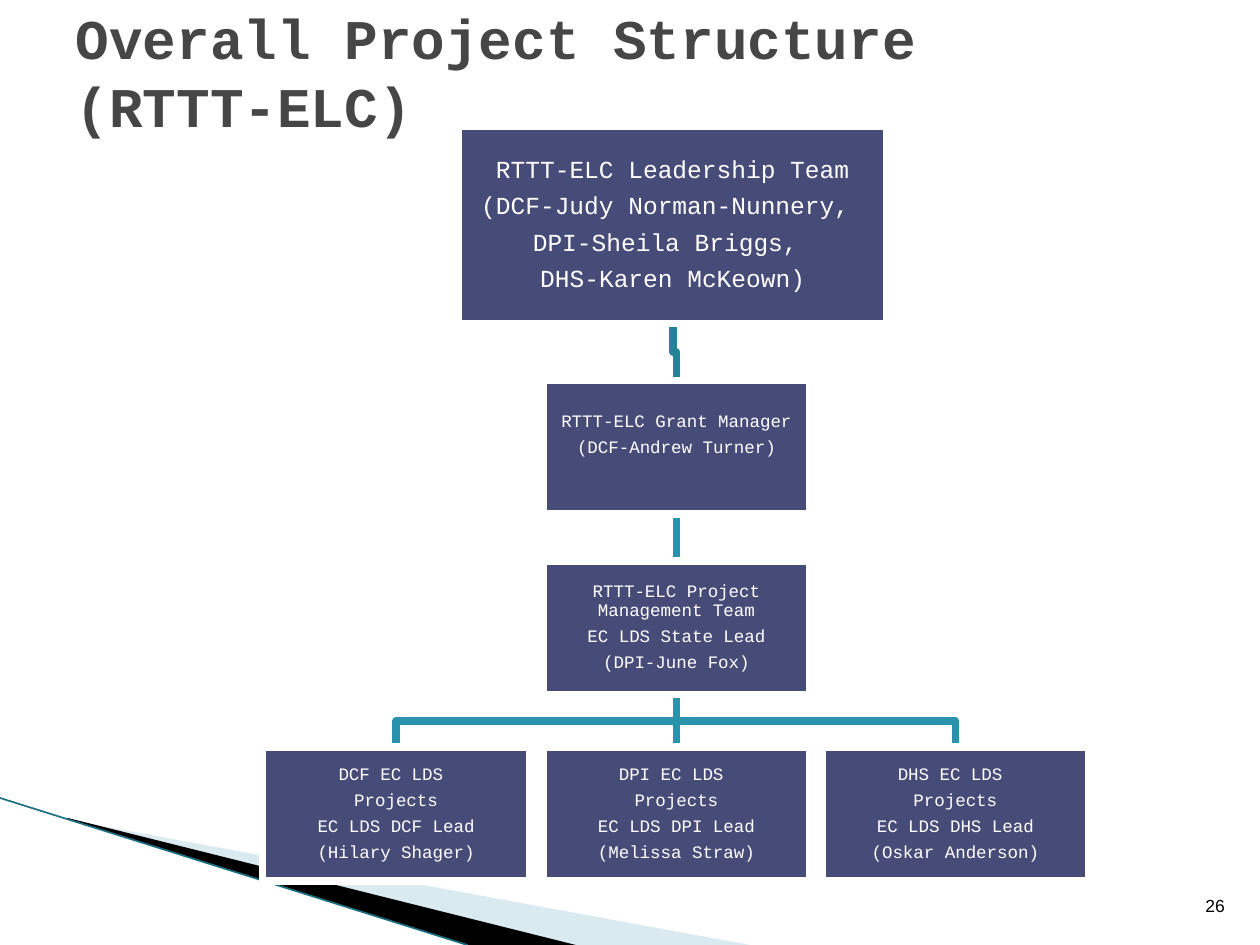
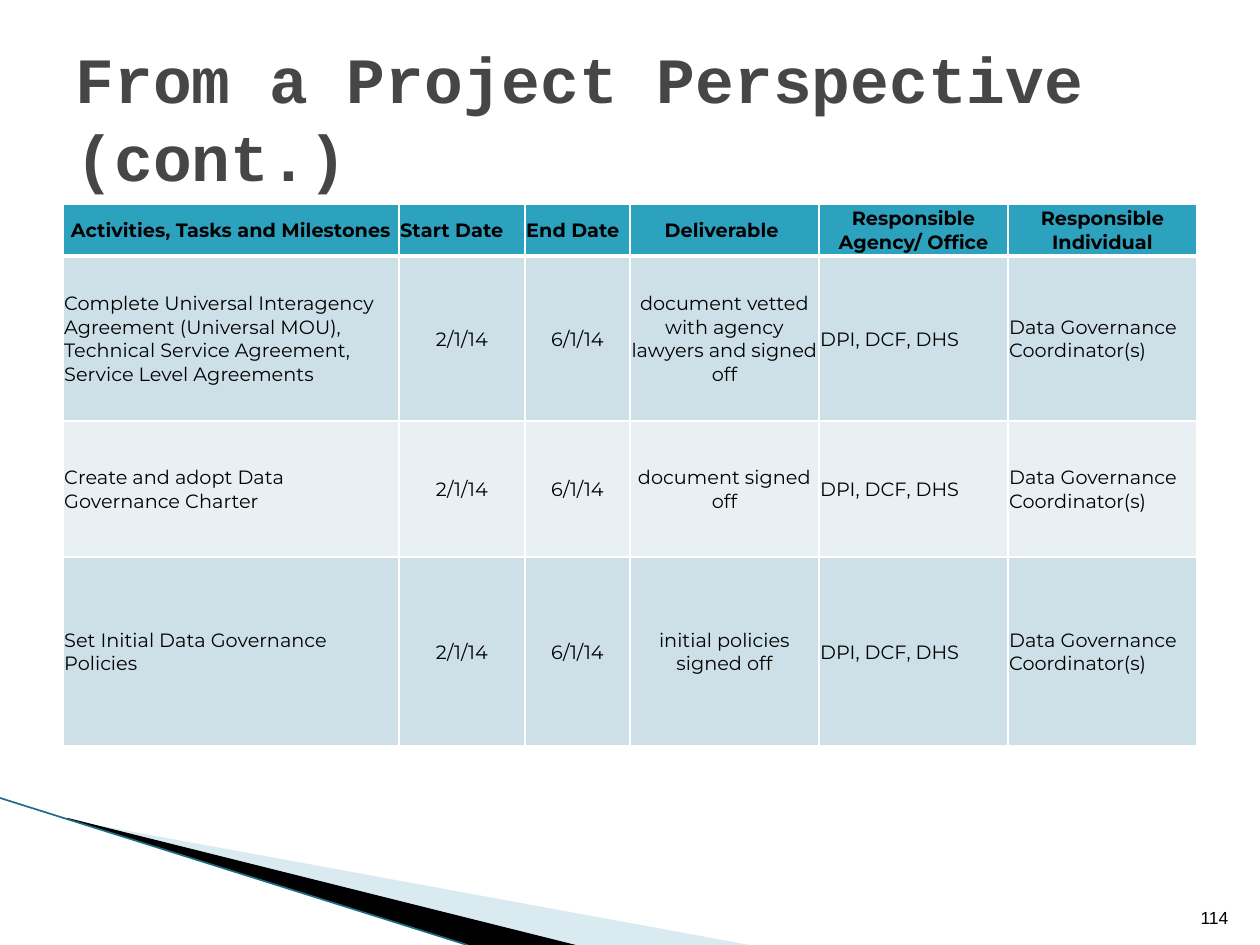
from lxml import etree
from pptx import Presentation
from pptx import util as u
from pptx.dml.color import RGBColor
from pptx.enum import shapes, text
from pptx.oxml import ns

Pt = u.Pt
LEFT, CENTER, RIGHT = text.PP_ALIGN.LEFT, text.PP_ALIGN.CENTER, text.PP_ALIGN.RIGHT
MIDDLE = text.MSO_ANCHOR.MIDDLE
MONO = "Courier New"
WHITE, BLACK, TITLE_GREY = "FFFFFF", "000000", "464646"
NAVY, TEAL, DARK_TEAL = "474B78", "2993AD", "248299"
PALE_BLUE, EDGE_TEAL = "A0CBDC", "1B6F83"
HEADER_FILL, ROW_FILLS = "2DA2BF", ["CDE0E8", "E8F0F4"]


def paint(color_format, hex_color):
    """Give a fill, line or font colour object its colour."""
    color_format.rgb = RGBColor.from_string(hex_color)


def style(p, font, size, color, align, bold=False):
    p.alignment = align
    p.font.name, p.font.size, p.font.bold = font, Pt(size), bold
    paint(p.font.color, color)


prs = Presentation()
prs.slide_width, prs.slide_height = Pt(720), Pt(540)

# Titles and page numbers: words, size, box height and width, number and its box
pages = [
    ("Overall Project Structure (RTTT-ELC)", 32, 624, 38, "26", (522, 498, 185, 29)),
    ("From a Project Perspective (cont.)", 36.9, 648, 90, "114", (654, 505, 55, 29)),
]
for title, size, width, height, number, number_box in pages:
    s = prs.slides.add_slide(prs.slide_layouts[5])
    sp = s.shapes.title
    sp.left, sp.top, sp.width, sp.height = Pt(36), Pt(21.6), Pt(width), Pt(height)
    tf = sp.text_frame
    tf.text = title
    tf.auto_size = text.MSO_AUTO_SIZE.NONE
    tf.vertical_anchor = MIDDLE
    style(tf.paragraphs[0], MONO, size, TITLE_GREY, LEFT, True)

    tf = s.shapes.add_textbox(*map(Pt, number_box)).text_frame
    tf.word_wrap = True
    tf.vertical_anchor = text.MSO_ANCHOR.BOTTOM
    tf.text = number
    style(tf.paragraphs[0], "Arial", 10, BLACK, RIGHT)

chart_slide, table_slide = prs.slides

# Corner wedges, shared through the slide master
s = chart_slide
master_first = prs.slide_master.shapes[0].element
wedges = [
    (PALE_BLUE, [(39.6, 468.7), (428.4, 540), (328.3, 540), (39.6, 468)]),
    (BLACK, [(38.2, 467.3), (329, 540), (267.8, 540), (38.9, 468)]),
]
for color, points in wedges:
    points = [(Pt(x), Pt(y)) for x, y in points]
    outline = s.shapes.build_freeform(*points[0])
    outline.add_line_segments(points[1:])
    sp = outline.convert_to_shape()
    sp.shadow.inherit = False
    sp.line.fill.background()
    sp.fill.solid()
    paint(sp.fill.fore_color, color)
    if color == PALE_BLUE:
        srgb = sp.element.find(".//" + ns.qn("a:srgbClr"))
        etree.SubElement(srgb, ns.qn("a:alpha"), val="40000")
    master_first.addprevious(sp.element)

edge = s.shapes.add_connector(shapes.MSO_CONNECTOR.STRAIGHT, 0, Pt(456), Pt(267), Pt(540))
edge.line.width = Pt(0.95)
paint(edge.line.color, EDGE_TEAL)
etree.SubElement(edge.element.spPr, ns.qn("a:effectLst"))
master_first.addprevious(edge.element)

# Organisation chart
BOX_W, BOX_H = 152.6, 76.3
columns = [150, 310.2, 469.6]
BOTTOM_Y = 427
leads = [("DCF", "Hilary Shager"), ("DPI", "Melissa Straw"), ("DHS", "Oskar Anderson")]
teams = [
    (262, 72, 245, 113, 14, "RTTT-ELC Leadership Team\n(DCF-Judy Norman-Nunnery, \n"
                            "DPI-Sheila Briggs, \nDHS-Karen McKeown)"),
    (columns[1], 217.5, BOX_W, BOX_H, 10, "RTTT-ELC Grant Manager\n(DCF-Andrew Turner)"),
    (columns[1], 320.5, BOX_W, BOX_H, 10,
     "RTTT-ELC Project Management Team\nEC LDS State Lead\n(DPI-June Fox)"),
]
for x, (agency, person) in zip(columns, leads):
    teams.append((x, BOTTOM_Y, BOX_W, BOX_H, 10,
                  f"{agency} EC LDS \nProjects\nEC LDS {agency} Lead\n({person})"))

boxes = []
for x, y, w, h, size, words in teams:
    sp = s.shapes.add_shape(shapes.MSO_SHAPE.RECTANGLE, Pt(x), Pt(y), Pt(w), Pt(h))
    sp.shadow.inherit = False
    sp.fill.solid()
    paint(sp.fill.fore_color, NAVY)
    sp.line.width = Pt(4.33)
    paint(sp.line.color, WHITE)
    tf = sp.text_frame
    tf.word_wrap = True
    tf.vertical_anchor = MIDDLE
    tf.margin_left = tf.margin_right = tf.margin_top = tf.margin_bottom = Pt(0.7)
    tf.text = words
    for p in tf.paragraphs:
        style(p, MONO, size, WHITE, CENTER)
        p.line_spacing = 0.9
        p.space_after = Pt(round(0.41 * size, 1))
    boxes.append(sp)
leadership, manager, project_team, *lead_boxes = boxes
manager.text_frame.margin_bottom = Pt(15)

links = [(leadership, manager, DARK_TEAL), (manager, project_team, TEAL)]
links += [(project_team, lead, TEAL) for lead in lead_boxes]
for upper, lower, color in links:
    x1, y1 = upper.left + upper.width // 2, upper.top + upper.height
    x2, y2 = lower.left + lower.width // 2, lower.top
    if x1 == x2:
        link = s.shapes.add_connector(shapes.MSO_CONNECTOR.STRAIGHT, x1, y1, x2, y2)
        link.begin_connect(upper, 2)
        link.end_connect(lower, 0)
        etree.SubElement(link.element.spPr, ns.qn("a:effectLst"))
    else:
        mid = (y1 + y2) // 2
        elbow = s.shapes.build_freeform(x1, y1)
        elbow.add_line_segments([(x1, mid), (x2, mid), (x2, y2)], close=False)
        link = elbow.convert_to_shape()
        link.shadow.inherit = False
        link.fill.background()
    link.line.width = Pt(4.33)
    paint(link.line.color, color)
    if link.element.spPr.find(ns.qn("a:effectLst")) is not None:
        link.element.spPr.append(link.element.spPr.find(ns.qn("a:effectLst")))
    leadership.element.addprevious(link.element)

# Activity table
agencies, owner = "DPI, DCF, DHS", "Data Governance Coordinator(s)"
start, end = "2/1/14", "6/1/14"
rows = [
    ("Activities, Tasks and Milestones", "Start Date", "End Date", "Deliverable ",
     "Responsible Agency/ Office", "Responsible Individual"),
    ("Complete Universal Interagency Agreement (Universal MOU), Technical Service Agreement, "
     "Service Level Agreements", start, end,
     "document vetted with agency lawyers and signed off", agencies, owner),
    ("Create and adopt Data Governance Charter", start, end, "document signed off",
     agencies, owner),
    ("Set Initial Data Governance Policies", start, end, "initial policies signed off",
     agencies, owner),
]
header_aligns = [CENTER, LEFT, LEFT, CENTER, CENTER, CENTER]
body_aligns = [LEFT, CENTER, CENTER, CENTER, LEFT, LEFT]
table = table_slide.shapes.add_table(4, 6, Pt(36), Pt(116.8), Pt(648), Pt(309.6)).table
for column, width in zip(table.columns, [192, 72, 60, 108, 108, 108]):
    column.width = Pt(width)
for row, height in zip(table.rows, [29.5, 94.3, 77.8, 108]):
    row.height = Pt(height)

for r, row in enumerate(rows):
    aligns = body_aligns if r else header_aligns
    for c, words in enumerate(row):
        cell = table.cell(r, c)
        tcPr = cell._tc.get_or_add_tcPr()
        for side in ("L", "R", "T", "B"):
            under_header = (r, side) in [(0, "B"), (1, "T")]
            ln = etree.SubElement(tcPr, ns.qn("a:ln" + side), w=str(Pt(3 if under_header else 1)))
            solid = etree.SubElement(ln, ns.qn("a:solidFill"))
            etree.SubElement(solid, ns.qn("a:srgbClr"), val=WHITE)
        cell.fill.solid()
        paint(cell.fill.fore_color, ROW_FILLS[(r - 1) % 2] if r else HEADER_FILL)
        cell.margin_left = cell.margin_right = cell.margin_top = Pt(0.7)
        cell.margin_bottom = 0
        cell.vertical_anchor = MIDDLE
        cell.text = words
        style(cell.text_frame.paragraphs[0], "Montserrat", 11, BLACK, aligns[c], r == 0)

prs.save("out.pptx")
